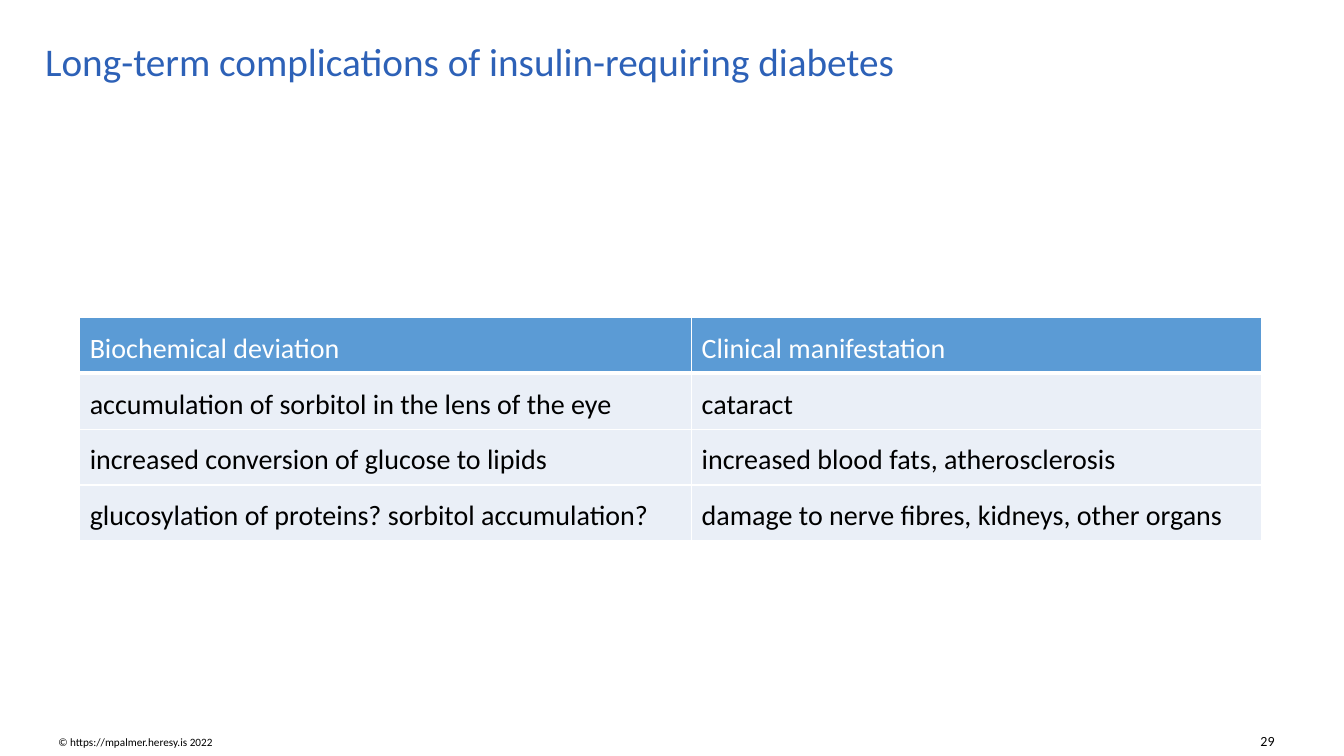
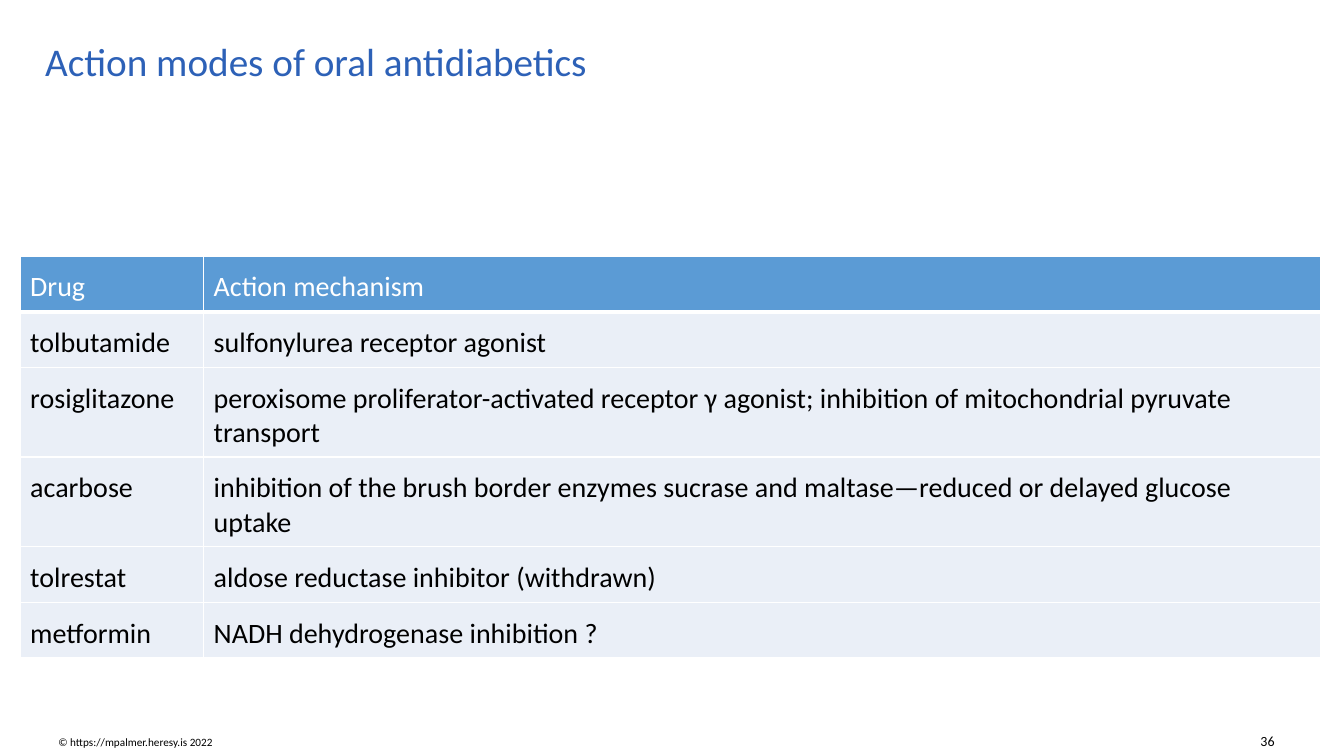
from lxml import etree
from pptx import Presentation
from pptx import util as u
from pptx.dml.color import RGBColor
from pptx.enum import text
from pptx.oxml import ns

PX = 9144  # EMU per px, 100 px to the inch
FONT = "Calibri"
BLUE = RGBColor(0x2D, 0x61, 0xB7)
HEAD = RGBColor(0x5B, 0x9B, 0xD5)
PALE = RGBColor(0xEA, 0xEF, 0xF7)
WHITE = RGBColor(0xFF, 0xFF, 0xFF)
BLACK = RGBColor(0x00, 0x00, 0x00)
ROW = 50
LEFT, RIGHT = text.PP_ALIGN.LEFT, text.PP_ALIGN.RIGHT
MIDDLE, BOTTOM = text.MSO_ANCHOR.MIDDLE, text.MSO_ANCHOR.BOTTOM

# Each slide: title, number, table corner, column widths, rows
PAGES = [
    ("Long-term complications of insulin-requiring diabetes", "29",
     (79, 315), (607, 565), [
        ("Biochemical deviation", "Clinical manifestation"),
        ("accumulation of sorbitol in the lens of the eye", "cataract"),
        ("increased conversion of glucose to lipids",
         "increased blood fats, atherosclerosis"),
        ("glucosylation of proteins? sorbitol accumulation?",
         "damage to nerve fibres, kidneys, other organs"),
     ]),
    ("Action modes of oral antidiabetics", "36",
     (20, 254), (182, 1108), [
        ("Drug", "Action mechanism"),
        ("tolbutamide", "sulfonylurea receptor agonist"),
        ("rosiglitazone",
         "peroxisome proliferator-activated receptor γ agonist; "
         "inhibition of mitochondrial pyruvate transport"),
        ("acarbose",
         "inhibition of the brush border enzymes sucrase and maltase—"
         "reduced or delayed glucose uptake"),
        ("tolrestat", "aldose reductase inhibitor (withdrawn)"),
        ("metformin", "NADH dehydrogenase inhibition ?"),
     ]),
]


def write(frame, words, size, color):
    """Put one paragraph into a frame and format it."""
    frame.text = words
    para = frame.paragraphs[0]
    font = para.runs[0].font
    font.name, font.size, font.bold = FONT, u.Pt(size), False
    font.color.rgb = color
    return para


def edge(cell, head):
    """Draw white borders, heavier under the header row."""
    props = cell._tc.get_or_add_tcPr()
    for i, side in enumerate("LRTB"):
        width = 3 if head and side == "B" else 1
        line = etree.Element(ns.qn(f"a:ln{side}"), w=str(u.Pt(width)))
        fill = etree.SubElement(line, ns.qn("a:solidFill"))
        etree.SubElement(fill, ns.qn("a:srgbClr"), val=str(WHITE))
        props.insert(i, line)


deck = Presentation()
deck.slide_width, deck.slide_height = 1333 * PX, 750 * PX

for title, number, (left, top), widths, rows in PAGES:
    slide = deck.slides.add_slide(deck.slide_layouts[6])

    # Footer, number and title
    for words, spot, size, color, align, anchor in [
        ("© https://mpalmer.heresy.is 2022", (48, 725, 314, 23),
         8, BLACK, LEFT, BOTTOM),
        (number, (1204, 721, 70, 27), 10, BLACK, RIGHT, BOTTOM),
        (title, (35, 24, 1270, 78), 28, BLUE, LEFT, MIDDLE),
    ]:
        box = slide.shapes.add_textbox(*(n * PX for n in spot))
        frame = box.text_frame
        frame.word_wrap = True
        frame.vertical_anchor = anchor
        para = write(frame, words, size, color)
        para.alignment = align
        if words == title:
            para.line_spacing = 0.9

    # Table
    grid = slide.shapes.add_table(
        len(rows), len(widths), left * PX, top * PX,
        sum(widths) * PX, len(rows) * ROW * PX).table
    grid.horz_banding = False
    for col, width in zip(grid.columns, widths):
        col.width = width * PX
    for r, row in enumerate(rows):
        for c, words in enumerate(row):
            cell = grid.cell(r, c)
            cell.margin_left = cell.margin_right = 10 * PX
            cell.margin_top, cell.margin_bottom = 14 * PX, 8 * PX
            cell.fill.solid()
            cell.fill.fore_color.rgb = PALE if r else HEAD
            write(cell.text_frame, words, 20, BLACK if r else WHITE)
            edge(cell, r == 0)

deck.save("out.pptx")
